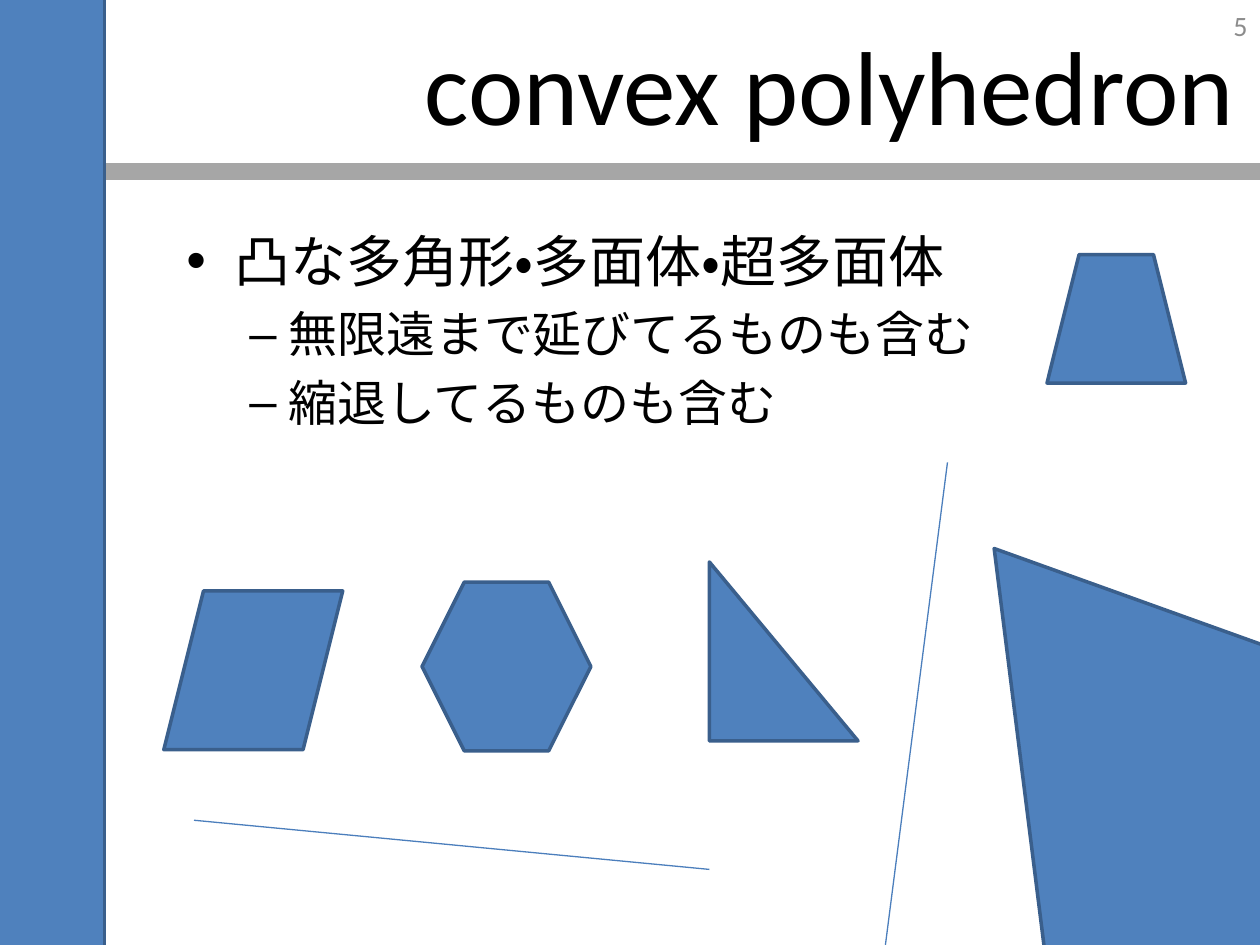
from lxml import etree
from pptx import Presentation
from pptx.dml.color import RGBColor
from pptx.enum.lang import MSO_LANGUAGE_ID
from pptx.enum.shapes import MSO_CONNECTOR, MSO_SHAPE
from pptx.enum.text import MSO_ANCHOR, PP_ALIGN
from pptx.oxml.ns import qn
from pptx.util import Inches, Pt

STRAIGHT = MSO_CONNECTOR.STRAIGHT
LEFT, RIGHT = PP_ALIGN.LEFT, PP_ALIGN.RIGHT
TOP, MIDDLE = MSO_ANCHOR.TOP, MSO_ANCHOR.MIDDLE
JAPANESE = MSO_LANGUAGE_ID.JAPANESE
WIDTH, HEIGHT = 10, 7.5
FONT = "Calibri"
COLORS = {
    "text": "000000",
    "number": "8C8C8C",
    "rule": "A6A6A6",
    "fill": "4F81BD",
    "outline": "3A5F8C",
    "line": "4B7EBC",
}
BULLET_LEVELS = [
    {"bullet": "•", "size": 32, "margin": 0.38, "indent": -0.38},
    {"bullet": "–", "size": 28, "margin": 0.81, "indent": -0.31},
]
POLYGONS = [
    (MSO_SHAPE.PARALLELOGRAM, (1.3, 4.69, 1.42, 1.26), 0),
    (MSO_SHAPE.HEXAGON, (3.35, 4.62, 1.34, 1.34), 0),
    (MSO_SHAPE.RIGHT_TRIANGLE, (5.63, 4.46, 1.18, 1.42), 0),
    (MSO_SHAPE.ISOSCELES_TRIANGLE, (6.7, 3.92, 4.85, 3.95), 321.3),
    (MSO_SHAPE.TRAPEZOID, (8.31, 2.02, 1.1, 1.02), 0),
    (MSO_SHAPE.RECTANGLE, (-1.93, -0.19, 2.76, 8), 0),
]


def color(name):
    return RGBColor.from_string(COLORS[name])


def add_text_box(slide, box, anchor=TOP):
    shape = slide.shapes.add_textbox(*map(Inches, box))
    frame = shape.text_frame
    frame.word_wrap = True
    frame.vertical_anchor = anchor
    return frame


def write(paragraph, text, size, color_name="text", align=LEFT, language=None):
    paragraph.alignment = align
    run = paragraph.add_run()
    run.text = text
    run.font.name = FONT
    run.font.size = Pt(size)
    run.font.color.rgb = color(color_name)
    if language:
        run.font.language_id = language


def add_bullets(slide, box, items):
    frame = add_text_box(slide, box)
    for index, (level, text) in enumerate(items):
        style = BULLET_LEVELS[level]
        paragraph = frame.add_paragraph() if index else frame.paragraphs[0]
        paragraph.level = level
        paragraph.space_before = Pt(style["size"] * 0.2)
        write(paragraph, text, style["size"], language=JAPANESE)
        properties = paragraph._p.get_or_add_pPr()
        properties.set("marL", str(Inches(style["margin"])))
        properties.set("indent", str(Inches(style["indent"])))
        etree.SubElement(properties, qn("a:buFont"), typeface="Arial")
        etree.SubElement(properties, qn("a:buChar"), char=style["bullet"])


def add_line(slide, start, end, color_name="line", width=0.75):
    connector = slide.shapes.add_connector(STRAIGHT, *map(Inches, start + end))
    connector.line.color.rgb = color(color_name)
    connector.line.width = Pt(width)
    etree.SubElement(connector._element.spPr, qn("a:effectLst"))


def add_polygon(slide, kind, box, rotation):
    shape = slide.shapes.add_shape(kind, *map(Inches, box))
    shape.rotation = rotation
    shape.shadow.inherit = False
    shape.fill.solid()
    shape.fill.fore_color.rgb = color("fill")
    shape.line.color.rgb = color("outline")
    shape.line.width = Pt(2)


def main():
    presentation = Presentation()
    presentation.slide_width = Inches(WIDTH)
    presentation.slide_height = Inches(HEIGHT)
    slide = presentation.slides.add_slide(presentation.slide_layouts[6])

    number = add_text_box(slide, (7.67, 0, 2.33, 0.4), MIDDLE)
    write(number.paragraphs[0], "5", 16, "number", RIGHT)
    add_line(slide, (0, 1.36), (WIDTH, 1.36), "rule", 10)
    title = add_text_box(slide, (0.89, 0.04, 9, 1.25), MIDDLE)
    write(title.paragraphs[0], "convex polyhedron", 60, align=RIGHT)
    add_bullets(slide, (1.38, 1.75, 7.81, 4.95), [
        (0, "凸な多角形・多面体・超多面体"),
        (1, "無限遠まで延びてるものも含む"),
        (1, "縮退してるものも含む"),
    ])
    for kind, box, rotation in POLYGONS:
        add_polygon(slide, kind, box, rotation)
    add_line(slide, (1.54, 6.51), (5.63, 6.9))
    add_line(slide, (6.73, 9.81), (7.52, 3.67))

    presentation.save("out.pptx")


if __name__ == "__main__":
    main()
